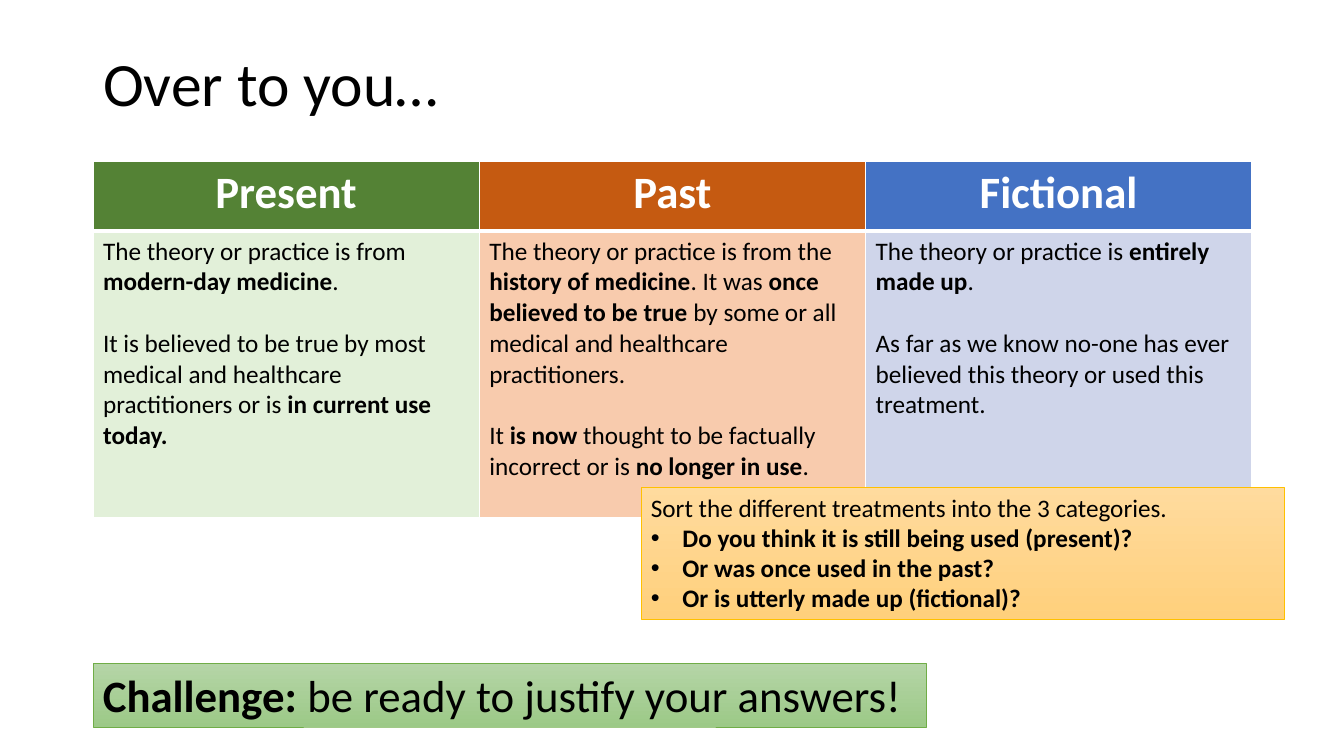
from lxml.etree import SubElement
from pptx import Presentation
from pptx.dml.color import RGBColor
from pptx.enum.shapes import MSO_SHAPE as Preset
from pptx.enum.text import MSO_ANCHOR as Anchor, PP_ALIGN as Align
from pptx.oxml.ns import qn
from pptx.util import Emu, Pt

COLUMNS = [
    ("Present", "548235", "E2F0D9", [
        "The theory or practice is from **modern-day medicine**.",
        "It is believed to be true by most medical and healthcare "
        "practitioners or is** in current use today.**"]),
    ("Past", "C55A11", "F8CBAD", [
        "The theory or practice is from the **history of medicine**. It was "
        "**once believed to be true **by some or all medical and healthcare practitioners.",
        "It **is now **thought to be factually incorrect or is **no longer in use**."]),
    ("Fictional", "4472C4", "CFD5EA", [
        "The theory or practice is **entirely made up**.",
        "As far as we know no-one has ever believed this theory or used this treatment."]),
]
INSTRUCTIONS = [
    "Sort the different treatments into the 3 categories.",
    "**Do you think it is still being used (present)?**",
    "**Or was once used in the past?**",
    "**Or is utterly made up (fictional)?**",
]


def px(length):
    """Turn slide pixels into EMU."""
    return Emu(round(length * 914400 / 100.8))


def colour(value):
    """Turn a hex string into a colour."""
    return RGBColor.from_string(value)


def write(frame, paragraphs, size=18, ink="000000", align=Align.LEFT, gap=0,
          spacing=None, bullets_from=None, font="Calibri"):
    """Fill a text frame, with bold between double asterisks."""
    for index, words in enumerate(paragraphs):
        paragraph = frame.add_paragraph() if index else frame.paragraphs[0]
        paragraph.alignment = align
        paragraph.line_spacing = spacing
        paragraph.space_before = Pt(gap if index else 0)
        if bullets_from is not None and index >= bullets_from:
            properties = paragraph._p.get_or_add_pPr()
            properties.set("marL", "285750")
            properties.set("indent", "-285750")
            SubElement(properties, qn("a:buFont"), typeface="Arial")
            SubElement(properties, qn("a:buChar"), char="•")
        for position, part in enumerate(words.split("**")):
            if part:
                run = paragraph.add_run()
                run.text = part
                run.font.name = font
                run.font.size = Pt(size)
                run.font.bold = position % 2 == 1
                run.font.color.rgb = colour(ink)


class SlideBuilder:
    """Hold the slide and its shared style."""

    def __init__(self):
        """Open a wide presentation with one titled slide."""
        self.deck = Presentation()
        self.deck.slide_width, self.deck.slide_height = px(1344), px(756)
        self.slide = self.deck.slides.add_slide(self.deck.slide_layouts[5])
        self.rule = "FFFFFF"

    def title(self, words, *box):
        """Place and fill the title."""
        heading = self.slide.shapes.title
        heading.left, heading.top, heading.width, heading.height = map(px, box)
        heading.text_frame.vertical_anchor = Anchor.MIDDLE
        write(heading.text_frame, [words], size=44, spacing=0.9)

    def cell(self, cell, fill, paragraphs, thick, **style):
        """Fill one table cell, with a thick rule on the given side."""
        properties = cell._tc.get_or_add_tcPr()
        for side in ("lnL", "lnR", "lnT", "lnB"):
            width = Pt(3 if side == thick else 1)
            border = SubElement(properties, qn(f"a:{side}"), w=str(width))
            paint = SubElement(border, qn("a:solidFill"))
            SubElement(paint, qn("a:srgbClr"), val=self.rule)
        cell.fill.solid()
        cell.fill.fore_color.rgb = colour(fill)
        write(cell.text_frame, paragraphs, **style)

    def categories(self, columns, left, top, width, heights):
        """Draw the table with one category per column."""
        table = self.slide.shapes.add_table(
            len(heights), len(columns), px(left), px(top), px(width), px(sum(heights))).table
        for row, height in zip(table.rows, heights):
            row.height = px(height)
        for index, (name, dark, light, meaning) in enumerate(columns):
            table.columns[index].width = px(width / len(columns))
            self.cell(table.cell(0, index), dark, [f"**{name}**"], "lnB",
                      size=32, ink="FFFFFF", align=Align.CENTER)
            self.cell(table.cell(1, index), light, meaning, "lnT", gap=22)

    def panel(self, paragraphs, box, shades, line, wrap=True, **style):
        """Draw a shaded text panel."""
        panel = self.slide.shapes.add_shape(Preset.RECTANGLE, *map(px, box))
        panel.shadow.inherit = False
        panel.fill.gradient()
        panel.fill.gradient_angle = 270
        for stop, shade in zip(panel.fill.gradient_stops, shades):
            stop.color.rgb = colour(shade)
        panel.line.color.rgb = colour(line)
        panel.line.width = Pt(0.5)
        panel.text_frame.word_wrap = wrap
        panel.text_frame.vertical_anchor = Anchor.TOP
        write(panel.text_frame, paragraphs, **style)


def main():
    """Build and save the slide."""
    builder = SlideBuilder()
    builder.title("Over to you…", 93, 40, 1159, 94)
    builder.categories(COLUMNS, 93, 161, 1159, (70, 287))
    builder.panel(INSTRUCTIONS, (641, 487, 643, 132), ("FFDB9E", "FFD07C"), "FFC000",
                  bullets_from=1)
    builder.panel(["**Challenge: **be ready to justify your answers!"], (93, 663, 833, 64),
                  ("B5D5A7", "9CC987"), "70AD47", wrap=False, size=32)
    builder.deck.save("out.pptx")


if __name__ == "__main__":
    main()
